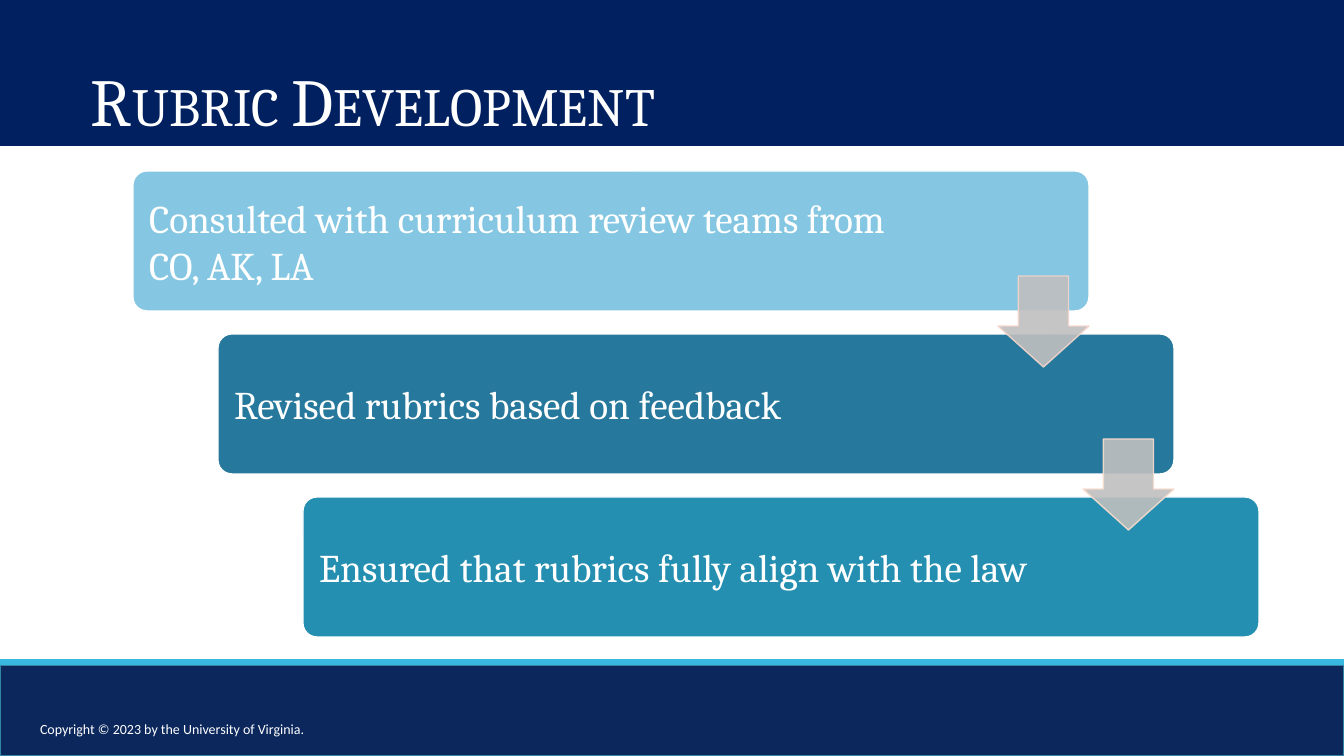
from lxml.etree import SubElement
from pptx import Presentation
from pptx.dml.color import RGBColor
from pptx.enum.shapes import MSO_CONNECTOR, MSO_SHAPE
from pptx.enum.text import MSO_ANCHOR, MSO_AUTO_SIZE, PP_ALIGN
from pptx.oxml.ns import qn
from pptx.util import Emu, Pt

PX_PER_INCH = 100.8
SLIDE_W, SLIDE_H = 1344, 756

WHITE = RGBColor(0xFF, 0xFF, 0xFF)
TITLE_NAVY = RGBColor(0x00, 0x20, 0x60)
FOOTER_NAVY = RGBColor(0x0B, 0x27, 0x5C)
FOOTER_EDGE = RGBColor(0x31, 0x86, 0xA1)
RULE_CYAN = RGBColor(0x39, 0xB9, 0xDF)
ARROW_GREY = RGBColor(0xBF, 0xBF, 0xBF)

# Each step: text, card colour, outline of the arrow leading onward
STEPS = [
    ("Consulted with curriculum review teams from CO, AK, LA",
     RGBColor(0x85, 0xC7, 0xE2), RGBColor(0xF5, 0xD5, 0xCC)),
    ("Revised rubrics based on feedback",
     RGBColor(0x26, 0x79, 0x9C), RGBColor(0xF8, 0xDD, 0xCE)),
    ("Ensured that rubrics fully align with the law",
     RGBColor(0x24, 0x8F, 0xB1), None),
]


def px(length):
    return Emu(round(length * 914400 / PX_PER_INCH))


def write_text(shape, text, *, size, font="Cambria", anchor=MSO_ANCHOR.MIDDLE,
               insets=(10, 5, 10, 5), line_spacing=None, small_caps=False):
    frame = shape.text_frame
    frame.word_wrap = True
    frame.auto_size = MSO_AUTO_SIZE.NONE
    frame.vertical_anchor = anchor
    (frame.margin_left, frame.margin_top,
     frame.margin_right, frame.margin_bottom) = map(px, insets)
    paragraph = frame.paragraphs[0]
    paragraph.alignment = PP_ALIGN.LEFT
    paragraph.line_spacing = line_spacing
    run = paragraph.add_run()
    run.text = text
    run.font.size = Pt(size)
    run.font.name = font
    run.font.color.rgb = WHITE
    if small_caps:
        run.font._element.set("cap", "small")


def add_block(slide, preset, box, fill, outline, adjustments=()):
    block = slide.shapes.add_shape(preset, *map(px, box))
    block.shadow.inherit = False
    block.fill.solid()
    block.fill.fore_color.rgb = fill
    block.line.color.rgb = outline
    block.line.width = Pt(1)
    for index, value in enumerate(adjustments):
        block.adjustments[index] = value
    return block


def make_translucent(shape, percent):
    for color in shape._element.spPr.iter(qn("a:srgbClr")):
        SubElement(color, qn("a:alpha"), val=str(percent * 1000))


def add_footer(slide, left, top, width, height):
    add_block(slide, MSO_SHAPE.RECTANGLE, (left, top, width, height),
              FOOTER_NAVY, FOOTER_EDGE)
    rule = slide.shapes.add_connector(
        MSO_CONNECTOR.STRAIGHT,
        px(left), px(top - 3), px(left + width), px(top - 3))
    rule.line.color.rgb = RULE_CYAN
    rule.line.width = Pt(4)
    SubElement(rule._element.spPr, qn("a:effectLst"))
    copyright_box = slide.shapes.add_textbox(
        px(left + 30), px(top + 51), px(288), px(47))
    write_text(copyright_box, "Copyright © 2023 by the University of Virginia.",
               size=10, font="Calibri", anchor=MSO_ANCHOR.TOP)


def add_title(slide, left, top, width, height):
    title = slide.shapes.title
    title.left, title.top, title.width, title.height = map(
        px, (left, top, width, height))
    title.fill.solid()
    title.fill.fore_color.rgb = TITLE_NAVY
    write_text(title, "Rubric Development", size=48, anchor=MSO_ANCHOR.BOTTOM,
               insets=(91, 5, 10, 5), line_spacing=0.9, small_caps=True)


def add_staircase(slide, left, top, width, height):
    card_w, card_h, arrow_size = 956, 140, 91
    shift_x = (width - card_w) / (len(STEPS) - 1)
    shift_y = (height - card_h) / (len(STEPS) - 1)
    corners = [(left + i * shift_x, top + i * shift_y)
               for i in range(len(STEPS))]

    # Step cards
    for (x, y), (text, fill, _) in zip(corners, STEPS):
        card = add_block(slide, MSO_SHAPE.ROUNDED_RECTANGLE,
                         (x, y, card_w, card_h), fill, WHITE, [0.1])
        write_text(card, text, size=28, insets=(12, 12, 156, 12))

    # Arrows bridging each card to the next
    for (x, y), (_, _, outline) in zip(corners[:-1], STEPS):
        arrow = add_block(
            slide, MSO_SHAPE.DOWN_ARROW,
            (x + card_w - arrow_size, y + 105, arrow_size, arrow_size),
            ARROW_GREY, outline, [0.55, 0.45])
        make_translucent(arrow, 90)


def main():
    deck = Presentation()
    deck.slide_width, deck.slide_height = px(SLIDE_W), px(SLIDE_H)
    slide = deck.slides.add_slide(deck.slide_layouts.get_by_name("Title Only"))
    add_footer(slide, 0, 665, SLIDE_W, 91)
    add_title(slide, 0, 0, SLIDE_W, 146)
    add_staircase(slide, 133, 171, 1126, 466)
    deck.save("out.pptx")


if __name__ == "__main__":
    main()
